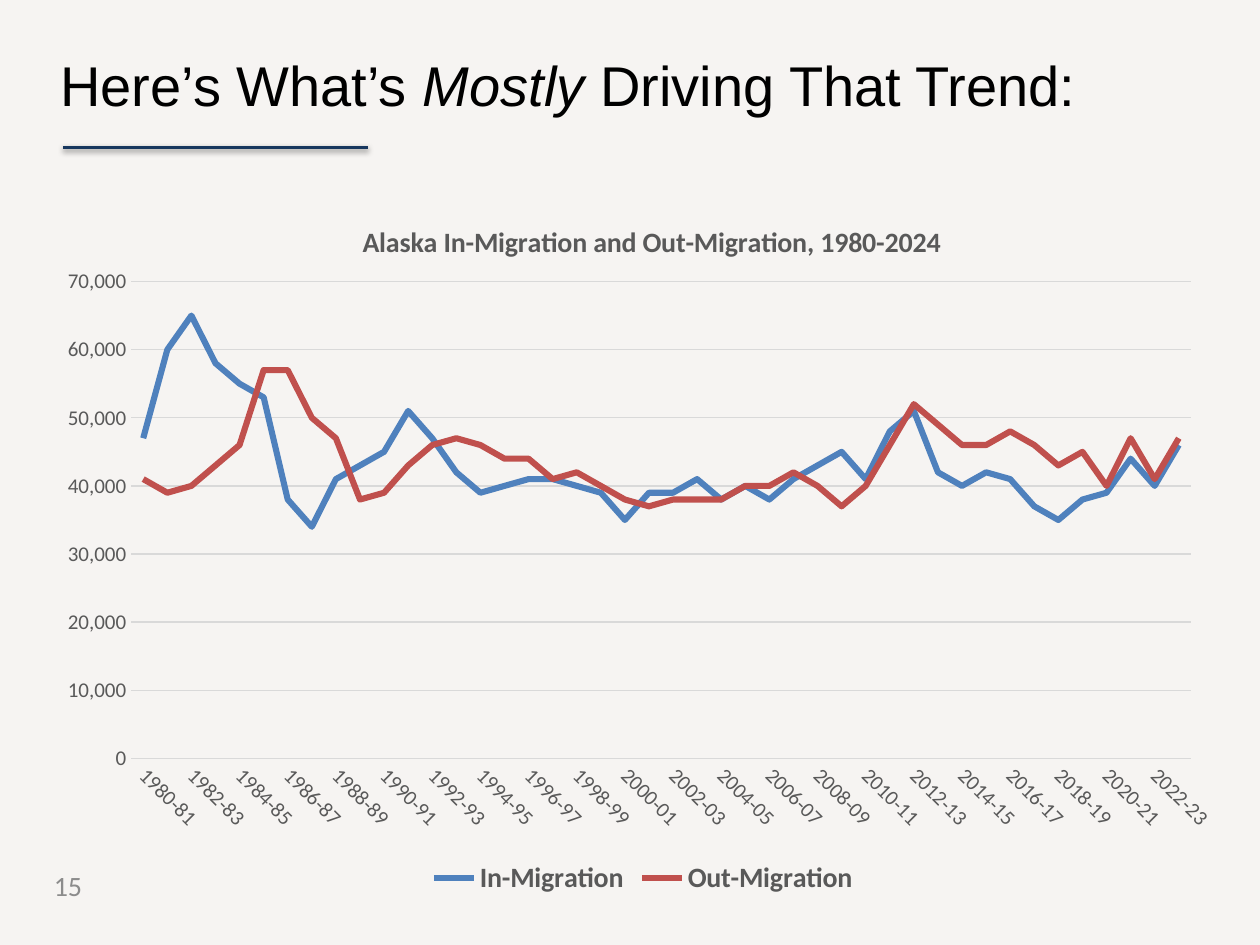
from lxml.etree import SubElement
from pptx import Presentation
from pptx.chart.data import CategoryChartData
from pptx.dml.color import RGBColor
from pptx.enum.chart import XL_CHART_TYPE, XL_LEGEND_POSITION, XL_TICK_MARK
from pptx.enum.shapes import MSO_CONNECTOR
from pptx.enum.text import MSO_ANCHOR, MSO_AUTO_SIZE, PP_ALIGN
from pptx.oxml.ns import qn
from pptx.util import Inches, Pt

BACKGROUND = RGBColor(0xF6, 0xF4, 0xF2)
BLACK = RGBColor(0, 0, 0)
NAVY = RGBColor(0x17, 0x37, 0x5E)
PAGE_GRAY = RGBColor(0x8C, 0x8C, 0x8C)
CHART_TEXT = RGBColor(0x59, 0x59, 0x59)
GRID = RGBColor(0xD9, 0xD9, 0xD9)
BLUE = RGBColor(0x4F, 0x81, 0xBD)
RED = RGBColor(0xC0, 0x50, 0x4D)

# Migration by year, in thousands of people
YEARS = [f"{year}-{(year + 1) % 100:02d}" for year in range(1980, 2024)]
IN_MIGRATION = [
    47, 60, 65, 58, 55, 53, 38, 34, 41, 43, 45, 51, 47, 42, 39,
    40, 41, 41, 40, 39, 35, 39, 39, 41, 38, 40, 38, 41, 43, 45,
    41, 48, 51, 42, 40, 42, 41, 37, 35, 38, 39, 44, 40, 46,
]
OUT_MIGRATION = [
    41, 39, 40, 43, 46, 57, 57, 50, 47, 38, 39, 43, 46, 47, 46,
    44, 44, 41, 42, 40, 38, 37, 38, 38, 38, 40, 40, 42, 40, 37,
    40, 46, 52, 49, 46, 46, 48, 46, 43, 45, 40, 47, 41, 47,
]
SERIES = [("In-Migration", IN_MIGRATION, BLUE), ("Out-Migration", OUT_MIGRATION, RED)]


def add_child(parent, tag, **attributes):
    return SubElement(parent, qn(tag), {key: str(value) for key, value in attributes.items()})


def set_layout(element, position, **settings):
    """Place a chart part by fractions of the chart area."""
    for old in element.findall(qn("c:layout")):
        element.remove(old)
    layout = add_child(element, "c:layout")
    manual = add_child(layout, "c:manualLayout")
    for name, value in settings.items():
        add_child(manual, f"c:{name}", val=value)
    element.remove(layout)
    element.insert(position, layout)


class SlideBuilder:
    def __init__(self, presentation):
        self.slide = presentation.slides.add_slide(presentation.slide_layouts[6])
        fill = self.slide.background.fill
        fill.solid()
        fill.fore_color.rgb = BACKGROUND

    def style_font(self, font, size, color, name="Calibri", bold=False):
        font.name = name
        font.size = Pt(size)
        font.bold = bold
        font.color.rgb = color

    def add_text(self, left, top, width, height, runs, size, color, name,
                 align=PP_ALIGN.LEFT, anchor=MSO_ANCHOR.TOP, auto_size=MSO_AUTO_SIZE.NONE):
        box = self.slide.shapes.add_textbox(
            Inches(left), Inches(top), Inches(width), Inches(height))
        frame = box.text_frame
        frame.word_wrap = True
        frame.auto_size = auto_size
        frame.vertical_anchor = anchor
        paragraph = frame.paragraphs[0]
        paragraph.alignment = align
        for text, italic in runs:
            run = paragraph.add_run()
            run.text = text
            self.style_font(run.font, size, color, name)
            run.font.italic = italic

    def add_rule(self, left, top, right, color, width):
        rule = self.slide.shapes.add_connector(
            MSO_CONNECTOR.STRAIGHT, Inches(left), Inches(top), Inches(right), Inches(top))
        rule.line.color.rgb = color
        rule.line.width = Pt(width)
        effects = add_child(rule._element.spPr, "a:effectLst")
        shadow = add_child(effects, "a:outerShdw", blurRad=Pt(3.1), dist=Pt(1.6),
                           dir=90 * 60000, rotWithShape=0)
        shadow_color = add_child(shadow, "a:srgbClr", val=BLACK)
        add_child(shadow_color, "a:alpha", val=38000)

    def add_line_chart(self, left, top, width, height, title, categories, series):
        data = CategoryChartData(number_format="#,##0")
        data.categories = categories
        for name, thousands, _ in series:
            data.add_series(name, [value * 1000 for value in thousands])
        chart = self.slide.shapes.add_chart(
            XL_CHART_TYPE.LINE, Inches(left), Inches(top),
            Inches(width), Inches(height), data).chart
        self.style_font(chart.font, 10, BLACK)

        # Title and plot position
        chart.has_title = True
        run = chart.chart_title.text_frame.paragraphs[0].add_run()
        run.text = title
        self.style_font(run.font, 16, CHART_TEXT, bold=True)
        chart.chart_title.include_in_layout = False
        set_layout(chart.chart_title._element, 1, xMode="edge", yMode="edge", x=0.26, y=0.04)
        set_layout(chart._chartSpace.chart.plotArea, 0, layoutTarget="inner",
                   xMode="edge", yMode="edge", x=0.07, y=0.13, w=0.89, h=0.67)

        # Legend
        chart.has_legend = True
        chart.legend.position = XL_LEGEND_POSITION.BOTTOM
        chart.legend.include_in_layout = False
        self.style_font(chart.legend.font, 16, CHART_TEXT, bold=True)

        # Axes
        category_axis, value_axis = chart.category_axis, chart.value_axis
        for axis in (category_axis, value_axis):
            axis.major_tick_mark = XL_TICK_MARK.NONE
            axis.minor_tick_mark = XL_TICK_MARK.NONE
            self.style_font(axis.tick_labels.font, 12, CHART_TEXT)
        value_axis.minimum_scale = 0
        value_axis.maximum_scale = 70000
        value_axis.major_unit = 10000
        value_axis.tick_labels.number_format = "#,##0"
        value_axis.tick_labels.number_format_is_linked = False
        value_axis.format.line.fill.background()
        for line in (category_axis.format.line, value_axis.major_gridlines.format.line):
            line.color.rgb = GRID
            line.width = Pt(0.75)

        # Slanted label for every second year
        axis_element = category_axis._element
        axis_element.find(qn("c:txPr")).find(qn("a:bodyPr")).set("rot", str(45 * 60000))
        label_skip = add_child(axis_element, "c:tickLblSkip", val=2)
        axis_element.find(qn("c:noMultiLvlLbl")).addprevious(label_skip)

        # Series
        plot = chart.plots[0]
        plot.vary_by_categories = False
        for line_series, (_, _, color) in zip(plot.series, series):
            line_series.smooth = False
            line_series.format.line.color.rgb = color
            line_series.format.line.width = Pt(3.5)


def main():
    presentation = Presentation()
    presentation.slide_width = Inches(10)
    presentation.slide_height = Inches(7.5)
    builder = SlideBuilder(presentation)

    # Page number
    builder.add_text(-1.58, 6.83, 2.33, 0.4, [("15", False)], 16, PAGE_GRAY, "Calibri",
                     align=PP_ALIGN.RIGHT, anchor=MSO_ANCHOR.MIDDLE)

    # Heading with rule
    builder.add_rule(0.5, 1.17, 2.92, NAVY, 2)
    heading = [("Here’s What’s ", False), ("Mostly", True), (" Driving That Trend:", False)]
    builder.add_text(0.38, 0.35, 9.17, 0.64, heading, 32, BLACK, "Arial",
                     auto_size=MSO_AUTO_SIZE.SHAPE_TO_FIT_TEXT)

    # Migration chart
    builder.add_line_chart(0.38, 1.5, 9.45, 5.65,
                           "Alaska In-Migration and Out-Migration, 1980-2024", YEARS, SERIES)

    presentation.save("out.pptx")


if __name__ == "__main__":
    main()
